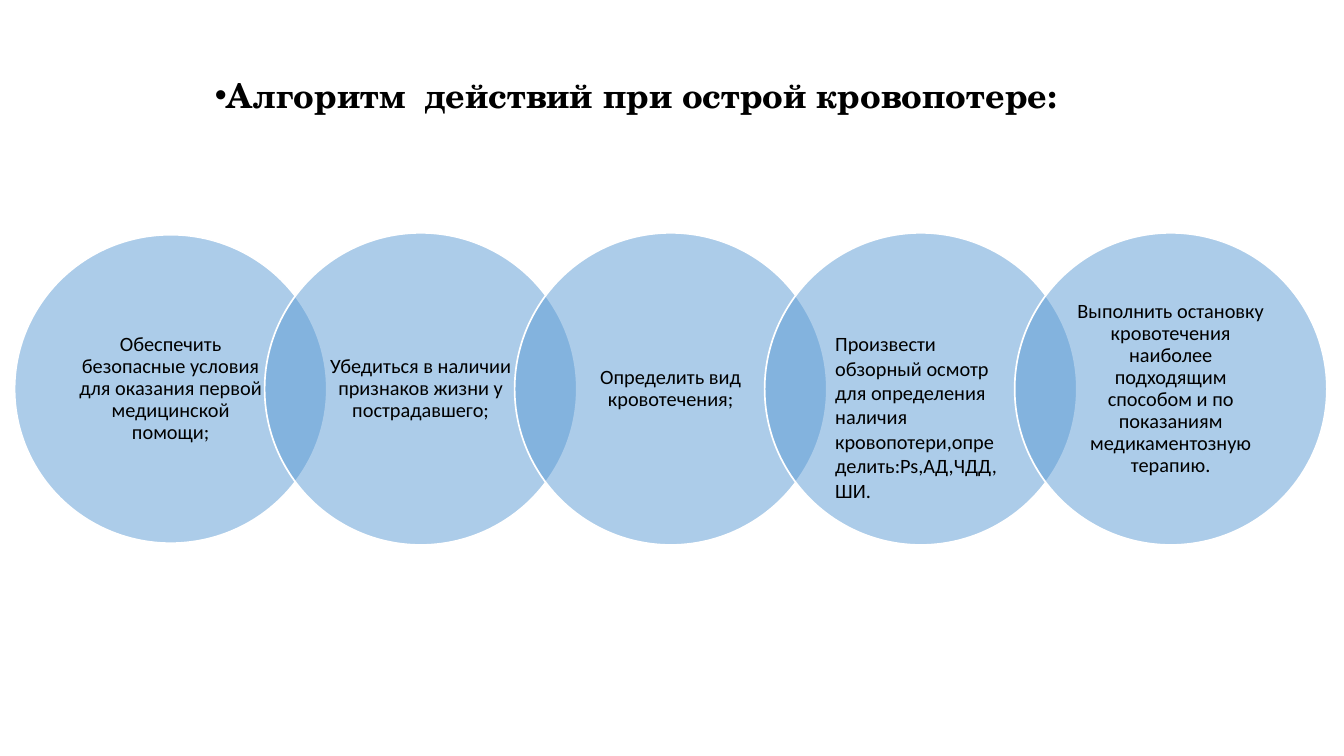
from lxml import etree
from pptx import Presentation
from pptx.dml.color import RGBColor as RGB
from pptx.enum.shapes import MSO_SHAPE as Shape
from pptx.enum.text import MSO_ANCHOR as Anchor, PP_ALIGN as Align
from pptx.oxml.ns import qn
from pptx.util import Inches, Pt

STEPS = [
    "Обеспечить безопасные условия для оказания первой медицинской помощи;",
    "Убедиться в наличии признаков жизни у пострадавшего;",
    "Определить вид кровотечения;",
    "",
    "Выполнить остановку кровотечения наиболее подходящим способом "
    "и по показаниям медикаментозную терапию.",
]
EXAM = ("Произвести обзорный осмотр для определения наличия "
        "кровопотери,определить:Ps,АД,ЧДД,ШИ.")
SIZE, STEP = 2.56, 2.05
LEFT, MID = 0.12, 3.19


def color(code):
    return RGB.from_string(code)


def bullet(para):
    props = para._p.get_or_add_pPr()
    props.set("marL", "0")
    props.set("indent", "0")
    etree.SubElement(props, qn("a:buFont")).set("typeface", "Arial")
    etree.SubElement(props, qn("a:buChar")).set("char", "•")


def write(shape, text, size=12, font="Calibri", bold=False, align=Align.LEFT,
          anchor=Anchor.TOP, pad=(0.1, 0.05), space=1, after=0, mark=False):
    """Fill a shape with one paragraph; pad holds the side and end insets."""
    frame = shape.text_frame
    frame.word_wrap = True
    frame.vertical_anchor = anchor
    frame.margin_left = frame.margin_right = Inches(pad[0])
    frame.margin_top = frame.margin_bottom = Inches(pad[1])
    para = frame.paragraphs[0]
    para.alignment = align
    para.line_spacing = space
    para.space_after = Pt(after)
    if mark:
        bullet(para)
    run = para.add_run()
    run.text = text
    run.font.size = Pt(size)
    run.font.name = font
    run.font.bold = bold
    run.font.color.rgb = color("000000")


def label(slide, text, left, top, width, height, **style):
    box = slide.shapes.add_textbox(*map(Inches, (left, top, width, height)))
    write(box, text, **style)


def circle(slide, text, left, height):
    """Draw a half-clear circle centred on the row."""
    disc = slide.shapes.add_shape(
        Shape.OVAL, Inches(left), Inches(MID - height / 2),
        Inches(SIZE), Inches(height))
    disc.shadow.inherit = False
    disc.fill.solid()
    disc.fill.fore_color.rgb = color("5B9BD5")
    tint = disc.fill._xPr.find(qn("a:solidFill"))[0]
    etree.SubElement(tint, qn("a:alpha")).set("val", "50000")
    disc.line.color.rgb = color("FFFFFF")
    disc.line.width = Pt(1)
    if text:
        write(disc, text, align=Align.CENTER, anchor=Anchor.MIDDLE,
              pad=(0.13, 0.01), space=0.9, after=5)


def main():
    deck = Presentation()
    deck.slide_width, deck.slide_height = Inches(11.02), Inches(6.2)
    slide = deck.slides.add_slide(deck.slide_layouts[6])
    label(slide, "Алгоритм  действий при острой кровопотере:",
          1.61, 0.64, 7.21, 0.28, size=20, font="TeX Gyre Schola", bold=True,
          align=Align.CENTER, anchor=Anchor.MIDDLE, pad=(0, 0), mark=True)
    for i, text in enumerate(STEPS):
        circle(slide, text, LEFT + i * STEP, SIZE if i else 2.53)
    label(slide, EXAM, 6.75, 2.67, 1.57, 1.27)
    deck.save("out.pptx")


if __name__ == "__main__":
    main()
